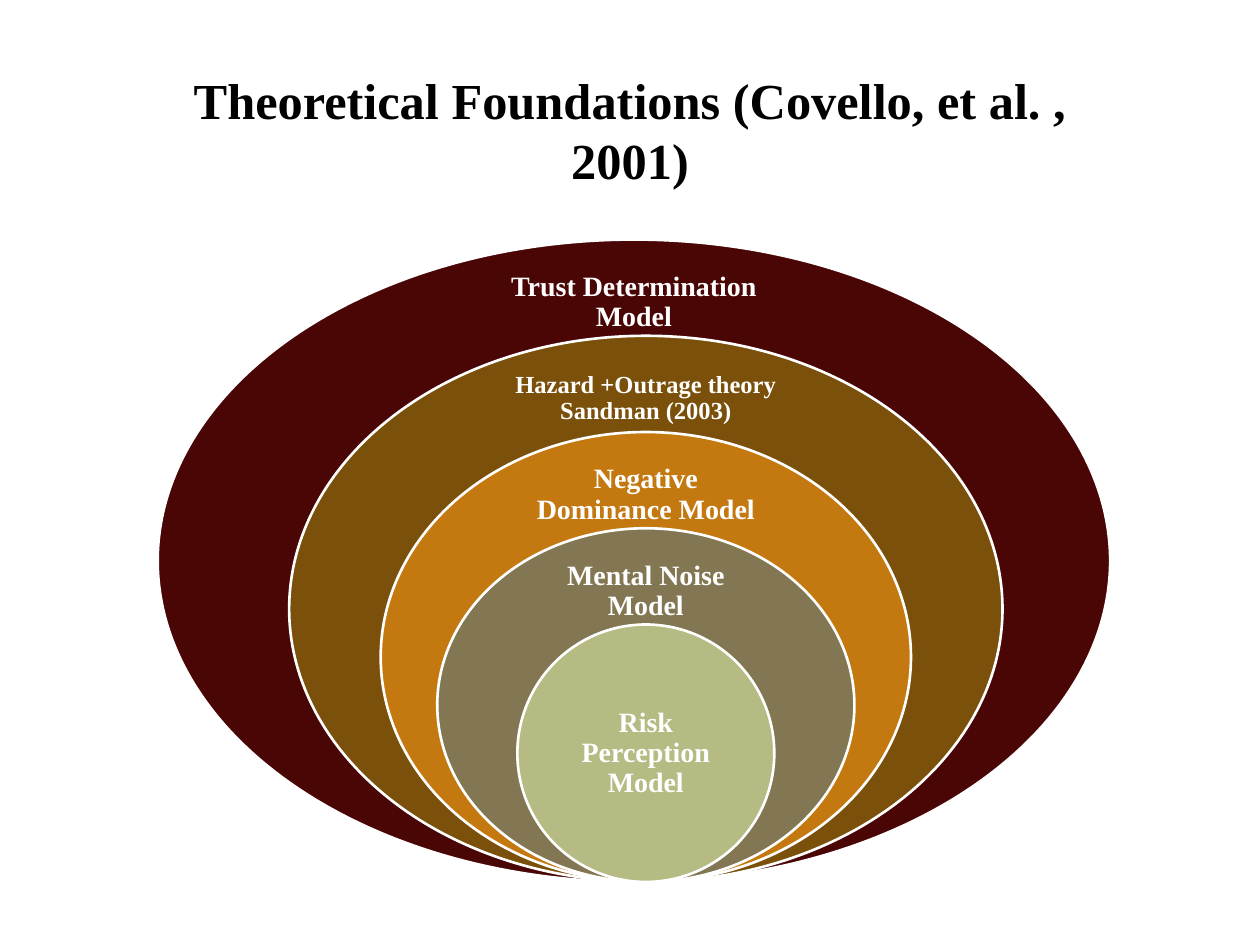
from dataclasses import dataclass

from pptx import Presentation
from pptx.dml.color import RGBColor
from pptx.enum.shapes import MSO_SHAPE
from pptx.enum.text import MSO_ANCHOR, MSO_AUTO_SIZE, PP_ALIGN
from pptx.util import Cm, Pt

OVAL = MSO_SHAPE.OVAL
MIDDLE = MSO_ANCHOR.MIDDLE
CENTER = PP_ALIGN.CENTER
NO_AUTOFIT = MSO_AUTO_SIZE.NONE
TITLE_ONLY_LAYOUT = 5


@dataclass(frozen=True)
class Theme:
    font: str = "Times New Roman"
    title_color: str = "000000"
    label_color: str = "FFFFFF"
    outline_color: str = "FFFFFF"
    ring_colors: tuple = ("4A0505", "7A500A", "C47810", "827752", "B5BB83")
    title_size: float = 28.8
    label_size: float = 16
    small_label_size: float = 14
    outline_width: float = 1.5


@dataclass(frozen=True)
class Ring:
    """One nested ellipse and its label; lengths are in centimetres."""
    text: str
    center: float
    width: float
    label_width: float
    label_size: float


class SlideBuilder:
    def __init__(self, slide, theme):
        self.slide = slide
        self.theme = theme

    def add_text(self, text_frame, text, size, color, line_spacing=1.0):
        text_frame.word_wrap = True
        text_frame.auto_size = NO_AUTOFIT
        text_frame.vertical_anchor = MIDDLE
        paragraph = text_frame.paragraphs[0]
        paragraph.alignment = CENTER
        paragraph.line_spacing = line_spacing
        run = paragraph.add_run()
        run.text = text
        run.font.name = self.theme.font
        run.font.size = Pt(size)
        run.font.bold = True
        run.font.color.rgb = RGBColor.from_string(color)

    def title(self, text, left, top, width, height):
        title = self.slide.shapes.title
        title.left, title.top = Cm(left), Cm(top)
        title.width, title.height = Cm(width), Cm(height)
        self.add_text(title.text_frame, text, self.theme.title_size, self.theme.title_color)

    def ellipse(self, group, center, top, width, height, color):
        ellipse = group.shapes.add_shape(
            OVAL, Cm(center - width / 2), Cm(top), Cm(width), Cm(height))
        ellipse.shadow.inherit = False
        ellipse.fill.solid()
        ellipse.fill.fore_color.rgb = RGBColor.from_string(color)
        ellipse.line.color.rgb = RGBColor.from_string(self.theme.outline_color)
        ellipse.line.width = Pt(self.theme.outline_width)

    def label(self, group, text, center, top, width, height, size):
        box = group.shapes.add_textbox(
            Cm(center - width / 2), Cm(top), Cm(width), Cm(height))
        frame = box.text_frame
        frame.margin_left = frame.margin_right = Cm(0.3)
        frame.margin_top = frame.margin_bottom = Cm(0.3)
        self.add_text(frame, text, size, self.theme.label_color, line_spacing=0.9)

    def stacked_venn(self, rings, top, height, step):
        """Nest ellipses on a shared bottom edge, each one step shorter than the last."""
        group = self.slide.shapes.add_group_shape()
        innermost = len(rings) - 1
        for index, (ring, color) in enumerate(zip(rings, self.theme.ring_colors)):
            ring_top = top + index * step
            ring_height = height - index * step
            self.ellipse(group, ring.center, ring_top, ring.width, ring_height, color)
            if index == innermost:
                label_top, label_height = ring_top + ring_height / 4, ring_height / 2
            else:
                label_top, label_height = ring_top + 0.63, 1.28
            self.label(group, ring.text, ring.center, label_top,
                       ring.label_width, label_height, ring.label_size)


def main():
    presentation = Presentation()
    presentation.slide_width, presentation.slide_height = Cm(25.4), Cm(19.05)
    slide = presentation.slides.add_slide(presentation.slide_layouts[TITLE_ONLY_LAYOUT])
    theme = Theme()
    builder = SlideBuilder(slide, theme)

    builder.title("Theoretical Foundations (Covello, et al. , 2001)", 2.54, 1.4, 20.32, 2.41)
    rings = [
        Ring("Trust Determination Model", 12.78, 19.2, 7, theme.label_size),
        Ring("Hazard +Outrage theory Sandman (2003)", 13.02, 14.38, 6.2, theme.small_label_size),
        Ring("Negative Dominance Model", 13.02, 10.69, 5.5, theme.label_size),
        Ring("Mental Noise Model", 13.02, 8.41, 4.55, theme.label_size),
        Ring("Risk Perception Model", 13.02, 5.18, 3.66, theme.label_size),
    ]
    builder.stacked_venn(rings, top=4.83, height=12.95, step=1.94)
    presentation.save("out.pptx")


if __name__ == "__main__":
    main()
